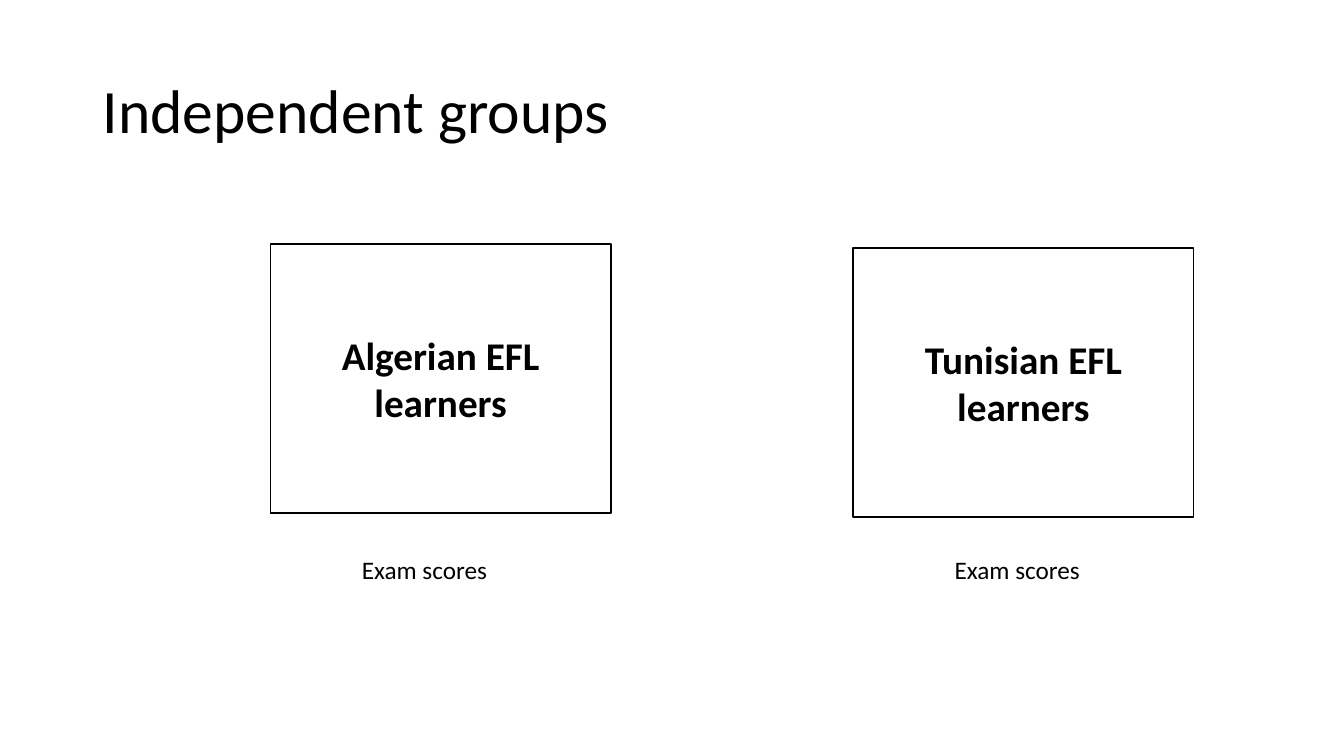
"""Slide comparing two independent groups of learners."""
from pptx import Presentation
from pptx.dml.color import RGBColor
from pptx.enum import shapes, text
from pptx.util import Inches, Pt

BLACK = "000000"


def color(value):
    return RGBColor.from_string(value)


def write(shape, words, size, bold=False, anchor=text.MSO_ANCHOR.TOP,
          align=text.PP_ALIGN.LEFT):
    frame = shape.text_frame
    frame.word_wrap = True
    frame.vertical_anchor = anchor
    paragraph = frame.paragraphs[0]
    paragraph.text = words
    paragraph.alignment = align
    paragraph.font.name = "Calibri"
    paragraph.font.size = Pt(size)
    paragraph.font.bold = bold
    paragraph.font.color.rgb = color(BLACK)
    return paragraph


def add_label(page, left, top, width, height, words, size, **style):
    box = page.shapes.add_textbox(
        Inches(left), Inches(top), Inches(width), Inches(height))
    return write(box, words, size, **style)


def add_group(page, left, top, words):
    box = page.shapes.add_shape(
        shapes.MSO_SHAPE.RECTANGLE,
        Inches(left), Inches(top), Inches(3.38), Inches(2.67))
    box.shadow.inherit = False
    box.fill.background()
    box.line.color.rgb = color(BLACK)
    box.line.width = Pt(1)
    write(box, words, 28, bold=True, anchor=text.MSO_ANCHOR.MIDDLE,
          align=text.PP_ALIGN.CENTER)


def main():
    deck = Presentation()
    deck.slide_width, deck.slide_height = Inches(13.33), Inches(7.5)
    page = deck.slides.add_slide(deck.slide_layouts[6])
    title = add_label(page, 0.92, 0.4, 11.5, 1.45, "Independent groups", 44,
                      anchor=text.MSO_ANCHOR.MIDDLE)
    title.line_spacing = 0.9
    groups = [("Algerian", 2.68, 2.42, 3.49), ("Tunisian", 8.46, 2.46, 9.37)]
    for nationality, left, top, score_left in groups:
        add_group(page, left, top, f"{nationality} EFL learners")
        add_label(page, score_left, 5.45, 1.58, 0.4, "Exam scores", 18)
    deck.save("out.pptx")


if __name__ == "__main__":
    main()
